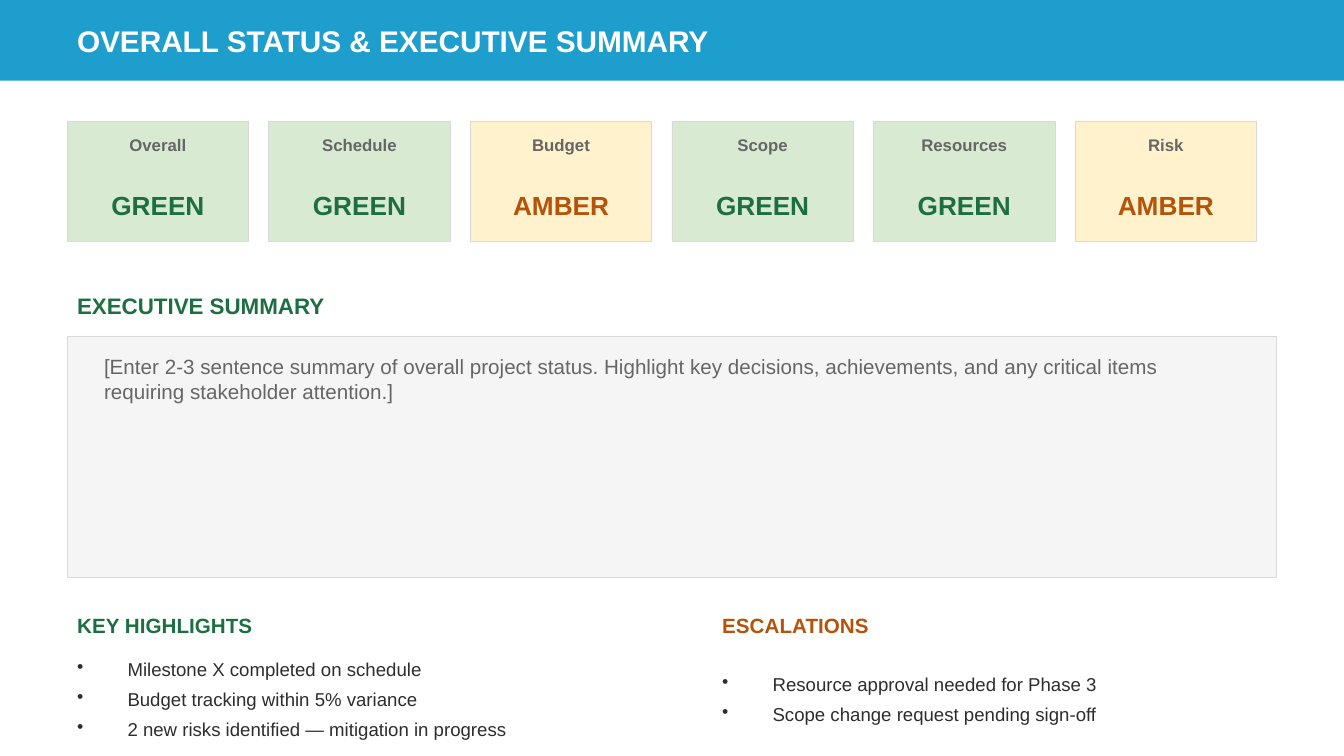
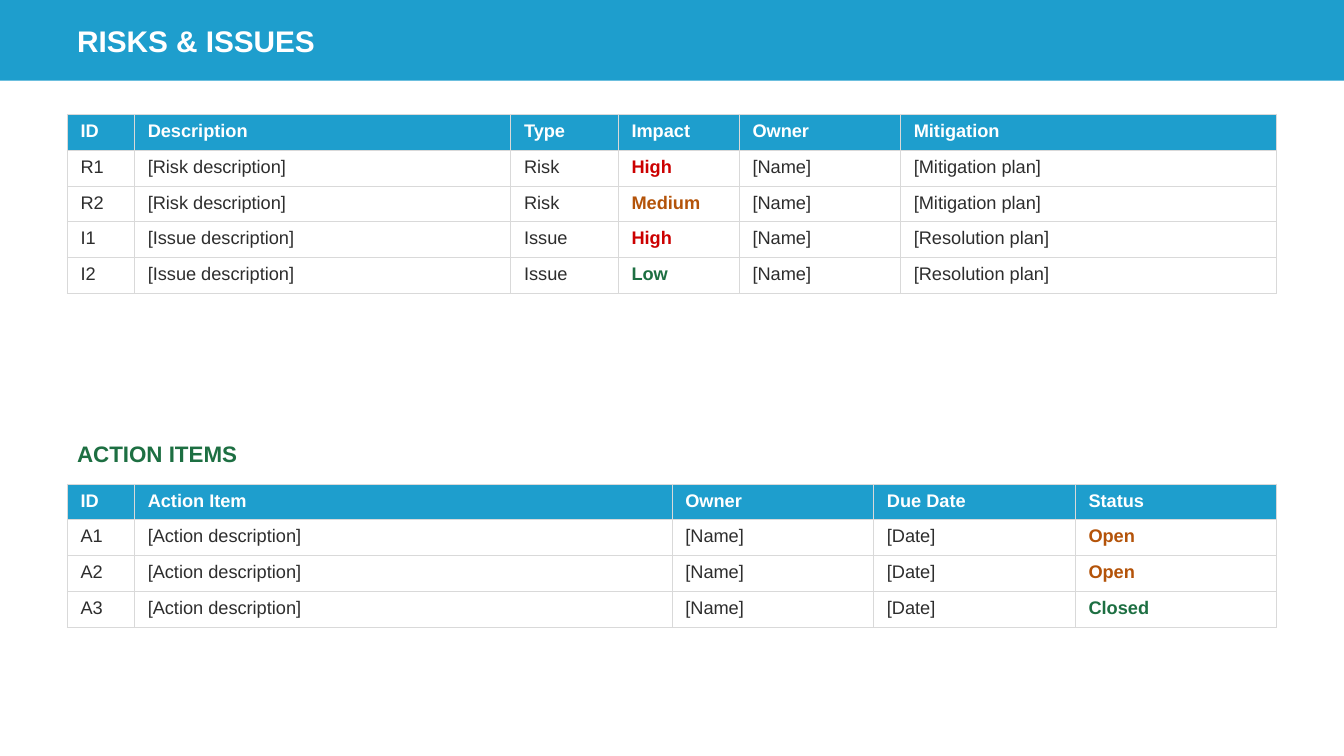
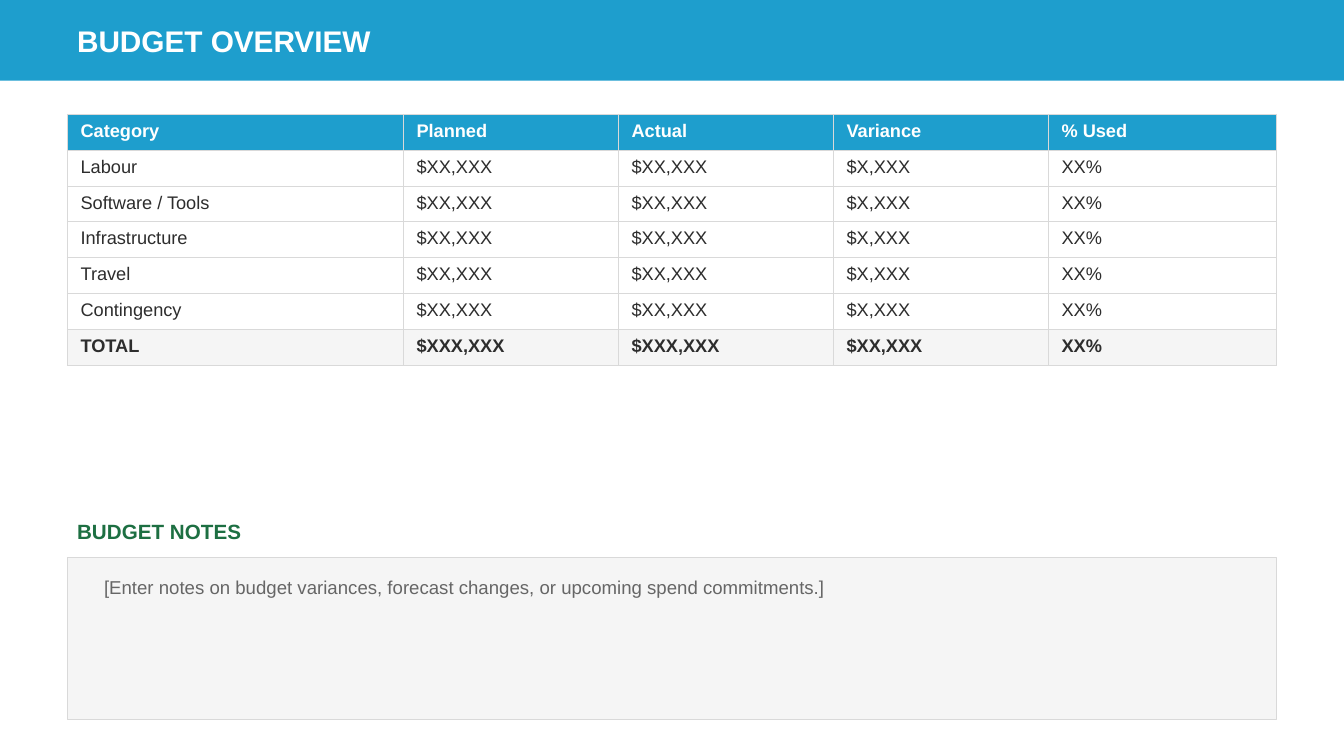
import pptx
import pptx.dml.color
import pptx.enum.shapes
import pptx.enum.text
import pptx.oxml
import pptx.oxml.ns
import pptx.util

Pt = pptx.util.Pt
RGB = pptx.dml.color.RGBColor.from_string
TOP = pptx.enum.text.MSO_ANCHOR.TOP
MIDDLE = pptx.enum.text.MSO_ANCHOR.MIDDLE
LEFT = pptx.enum.text.PP_ALIGN.LEFT
CENTER = pptx.enum.text.PP_ALIGN.CENTER


class Theme:
    font = "Arial"
    blue, white, ink, grey = "1E9ECD", "FFFFFF", "2D2D2D", "666666"
    green, amber, red = "1D6F42", "B45309", "CC0000"
    pale_green, pale_amber, panel, border = "D9EAD3", "FFF2CC", "F5F5F5", "D9D9D9"
    title, status, heading, subheading = 21.3, 18.7, 16, 14.7
    summary, body, cell, label = 14.7, 13.3, 13, 12
    hairline = 0.5
    status_colours = {
        "GREEN": green, "AMBER": amber,
        "High": red, "Medium": amber, "Low": green,
        "Open": amber, "Closed": green,
    }


MARGIN, CONTENT_WIDTH, ROW_HEIGHT = 48, 864, 25.6


def add_box(slide, left, top, width, height, fill=None, border=None, anchor=MIDDLE):
    """Add a filled rectangle, or a plain text box when there is no fill."""
    area = [Pt(length) for length in (left, top, width, height)]
    if fill is None:
        box = slide.shapes.add_textbox(*area)
    else:
        box = slide.shapes.add_shape(pptx.enum.shapes.MSO_SHAPE.RECTANGLE, *area)
        box.shadow.inherit = False
        box.fill.solid()
        box.fill.fore_color.rgb = RGB(fill)
        if border:
            box.line.color.rgb = RGB(border)
            box.line.width = Pt(Theme.hairline)
        else:
            box.line.fill.background()
    box.text_frame.word_wrap = True
    box.text_frame.vertical_anchor = anchor
    return box


def write(holder, lines, size, colour, bold=False, align=LEFT, bulleted=False):
    """Write one paragraph per line into a shape or table cell."""
    frame = holder.text_frame
    font_format = {"name": Theme.font, "size": Pt(size), "bold": bold}
    for index, line in enumerate(lines):
        paragraph = frame.add_paragraph() if index else frame.paragraphs[0]
        paragraph.alignment = align
        if bulleted:
            properties = paragraph._p.get_or_add_pPr()
            properties.set("marL", str(Pt(36)))
            properties.set("indent", str(-Pt(36)))
            properties.append(pptx.oxml.parse_xml(
                f'<a:buChar {pptx.oxml.ns.nsdecls("a")} char="•"/>'))
            paragraph.space_after = Pt(5.3)
        run = paragraph.add_run()
        run.text = line
        for attribute, value in font_format.items():
            setattr(run.font, attribute, value)
        run.font.color.rgb = RGB(colour)


presentation = pptx.Presentation()
presentation.slide_width, presentation.slide_height = Pt(960), Pt(540)

# Slides with their title bands
slides = []
for title in ("OVERALL STATUS & EXECUTIVE SUMMARY", "RISKS & ISSUES", "BUDGET OVERVIEW"):
    slide = presentation.slides.add_slide(presentation.slide_layouts[6])
    add_box(slide, 0, 0, 960, 57.6, Theme.blue)
    write(add_box(slide, MARGIN, 4.8, CONTENT_WIDTH, 48), [title],
          Theme.title, Theme.white, bold=True)
    slides.append(slide)
summary_slide, risks_slide, budget_slide = slides

# Status cards
cards = {"Overall": "GREEN", "Schedule": "GREEN", "Budget": "AMBER",
         "Scope": "GREEN", "Resources": "GREEN", "Risk": "AMBER"}
card_top, card_width, card_height, label_height = 86.4, 129.6, 86.4, 33.6
for index, (area, status) in enumerate(cards.items()):
    left = MARGIN + index * CONTENT_WIDTH / len(cards)
    card_fill = Theme.pale_green if status == "GREEN" else Theme.pale_amber
    add_box(summary_slide, left, card_top, card_width, card_height, card_fill, Theme.border)
    write(add_box(summary_slide, left, card_top, card_width, label_height),
          [area], Theme.label, Theme.grey, bold=True, align=CENTER)
    write(add_box(summary_slide, left, card_top + label_height, card_width,
                  card_height - label_height),
          [status], Theme.status, Theme.status_colours[status], bold=True, align=CENTER)

# Section headings
headings = [
    (summary_slide, "EXECUTIVE SUMMARY", MARGIN, 201.6, CONTENT_WIDTH, 33.6,
     Theme.heading, Theme.green),
    (summary_slide, "KEY HIGHLIGHTS", MARGIN, 432, 384, 28.8, Theme.subheading, Theme.green),
    (summary_slide, "ESCALATIONS", 508.8, 432, 384, 28.8, Theme.subheading, Theme.amber),
    (risks_slide, "ACTION ITEMS", MARGIN, 307.2, CONTENT_WIDTH, 33.6,
     Theme.heading, Theme.green),
    (budget_slide, "BUDGET NOTES", MARGIN, 364.8, CONTENT_WIDTH, 28.8,
     Theme.subheading, Theme.green),
]
for slide, heading, left, top, width, height, size, colour in headings:
    write(add_box(slide, left, top, width, height), [heading], size, colour, bold=True)

# Note panels
notes = [
    (summary_slide, 240, 172.8, 144, Theme.summary,
     "[Enter 2-3 sentence summary of overall project status. Highlight key decisions, "
     "achievements, and any critical items requiring stakeholder attention.]"),
    (budget_slide, 398.4, 115.2, 96, Theme.body,
     "[Enter notes on budget variances, forecast changes, or upcoming spend commitments.]"),
]
for slide, top, panel_height, text_height, size, prompt in notes:
    add_box(slide, MARGIN, top, CONTENT_WIDTH, panel_height, Theme.panel, Theme.border)
    write(add_box(slide, MARGIN + 19.2, top + 9.6, CONTENT_WIDTH - 38.4, text_height,
                  anchor=TOP),
          [prompt], size, Theme.grey)

# Highlights and escalations
bullet_lists = [
    (MARGIN, 384, ["Milestone X completed on schedule",
                   "Budget tracking within 5% variance",
                   "2 new risks identified — mitigation in progress"]),
    (508.8, 403.2, ["Resource approval needed for Phase 3",
                    "Scope change request pending sign-off"]),
]
for left, width, points in bullet_lists:
    write(add_box(summary_slide, left, 460.8, width, 76.8), points,
          Theme.body, Theme.ink, bulleted=True)

# Table contents
risks = [
    ["ID", "Description", "Type", "Impact", "Owner", "Mitigation"],
    ["R1", "[Risk description]", "Risk", "High", "[Name]", "[Mitigation plan]"],
    ["R2", "[Risk description]", "Risk", "Medium", "[Name]", "[Mitigation plan]"],
    ["I1", "[Issue description]", "Issue", "High", "[Name]", "[Resolution plan]"],
    ["I2", "[Issue description]", "Issue", "Low", "[Name]", "[Resolution plan]"],
]
actions = [["ID", "Action Item", "Owner", "Due Date", "Status"]]
for number, status in enumerate(("Open", "Open", "Closed"), start=1):
    actions.append([f"A{number}", "[Action description]", "[Name]", "[Date]", status])
budget = [["Category", "Planned", "Actual", "Variance", "% Used"]]
for category in ("Labour", "Software / Tools", "Infrastructure", "Travel", "Contingency"):
    budget.append([category, "$XX,XXX", "$XX,XXX", "$X,XXX", "XX%"])
budget.append(["TOTAL", "$XXX,XXX", "$XXX,XXX", "$XX,XXX", "XX%"])

# Tables
tables = [
    (risks_slide, 81.6, [48, 268.8, 76.8, 86.4, 115.2, 268.8], risks),
    (risks_slide, 345.6, [48, 384, 144, 144, 144], actions),
    (budget_slide, 81.6, [240, 153.6, 153.6, 153.6, 163.2], budget),
]
cell_margins = {"margin_left": Pt(9.6), "margin_right": Pt(9.6),
                "margin_top": Pt(4.8), "margin_bottom": Pt(4.8)}
for slide, top, widths, rows in tables:
    table = slide.shapes.add_table(
        len(rows), len(widths), Pt(MARGIN), Pt(top),
        Pt(CONTENT_WIDTH), Pt(ROW_HEIGHT * len(rows))).table
    table.horz_banding = False
    for column, width in zip(table.columns, widths):
        column.width = Pt(width)
    for row_index, values in enumerate(rows):
        table.rows[row_index].height = Pt(ROW_HEIGHT)
        is_header, is_total = row_index == 0, values[0] == "TOTAL"
        row_fill = Theme.blue if is_header else Theme.panel if is_total else None
        for column_index, value in enumerate(values):
            cell = table.cell(row_index, column_index)
            for attribute, margin in cell_margins.items():
                setattr(cell, attribute, margin)
            for side in "LRTB":
                cell._tc.get_or_add_tcPr().append(pptx.oxml.parse_xml(
                    f'<a:ln{side} {pptx.oxml.ns.nsdecls("a")} w="{Pt(Theme.hairline)}">'
                    f'<a:solidFill><a:srgbClr val="{Theme.border}"/></a:solidFill>'
                    f'</a:ln{side}>'))
            if row_fill:
                cell.fill.solid()
                cell.fill.fore_color.rgb = RGB(row_fill)
            else:
                cell.fill.background()
            colour = Theme.white if is_header else Theme.status_colours.get(value, Theme.ink)
            bold = is_header or is_total or value in Theme.status_colours
            write(cell, [value], Theme.cell, colour, bold=bold)

presentation.save("out.pptx")
